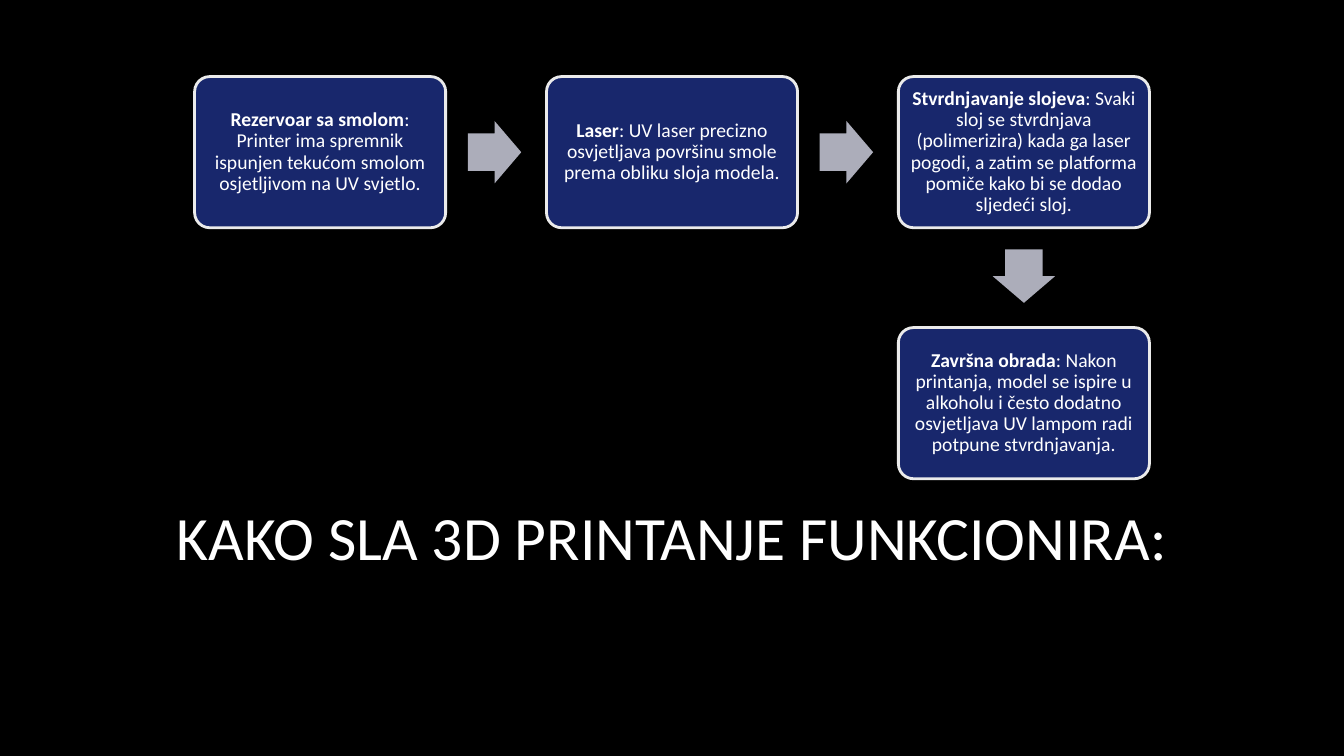
from dataclasses import dataclass

from pptx import Presentation
from pptx.dml.color import RGBColor
from pptx.enum.shapes import MSO_SHAPE
from pptx.enum.text import MSO_ANCHOR, PP_ALIGN
from pptx.shapes.autoshape import Shape
from pptx.slide import Slide
from pptx.text.text import Font
from pptx.util import Inches, Pt


@dataclass(frozen=True)
class Theme:
    """Colours, font and type sizes."""
    back: RGBColor = RGBColor(0, 0, 0)
    text: RGBColor = RGBColor(255, 255, 255)
    card: RGBColor = RGBColor.from_string("18276C")
    edge: RGBColor = RGBColor.from_string("EBEBEB")
    arrow: RGBColor = RGBColor.from_string("ACADBA")
    font: str = "Calibri"
    title: int = 44
    body: int = 14


@dataclass(frozen=True)
class Grid:
    """Card grid in inches: origin, card size, pitch and arrow size."""
    left: float = 1.93
    top: float = 0.76
    wide: float = 2.49
    high: float = 1.5
    col: float = 3.49
    row: float = 2.49
    long: float = 0.53
    span: float = 0.62
    shift: float = 0.015

    def mid(self, col: float, row: float) -> tuple[float, float]:
        """Return the centre of a grid cell."""
        return (self.left + self.wide / 2 + col * self.col,
                self.top + self.high / 2 + row * self.row)


@dataclass(frozen=True)
class Step:
    """One card of the flow and its cell."""
    col: int
    row: int
    head: str
    body: str


THEME = Theme()
GRID = Grid()
STEPS = (
    Step(0, 0, "Rezervoar sa smolom",
         ": Printer ima spremnik ispunjen tekućom smolom osjetljivom na UV svjetlo."),
    Step(1, 0, "Laser",
         ": UV laser precizno osvjetljava površinu smole prema obliku sloja modela."),
    Step(2, 0, "Stvrdnjavanje slojeva",
         ": Svaki sloj se stvrdnjava (polimerizira) kada ga laser pogodi, "
         "a zatim se platforma pomiče kako bi se dodao sljedeći sloj."),
    Step(2, 1, "Završna obrada",
         ": Nakon printanja, model se ispire u alkoholu i često dodatno "
         "osvjetljava UV lampom radi potpune stvrdnjavanja."),
)


def style(font: Font, size: int) -> None:
    """Apply the theme to a font."""
    font.name, font.size = THEME.font, Pt(size)
    font.color.rgb = THEME.text


def block(slide: Slide, kind: MSO_SHAPE, mid: tuple[float, float],
          wide: float, high: float, fill: RGBColor) -> Shape:
    """Add a flat shape around a centre."""
    shape = slide.shapes.add_shape(
        kind, Inches(mid[0] - wide / 2), Inches(mid[1] - high / 2),
        Inches(wide), Inches(high))
    shape.shadow.inherit = False
    shape.fill.solid()
    shape.fill.fore_color.rgb = fill
    return shape


def add_card(slide: Slide, step: Step) -> None:
    """Draw a step's card with its text."""
    card = block(slide, MSO_SHAPE.ROUNDED_RECTANGLE, GRID.mid(step.col, step.row),
                 GRID.wide, GRID.high, THEME.card)
    card.adjustments[0] = 0.1
    card.line.color.rgb, card.line.width = THEME.edge, Pt(2)
    frame = card.text_frame
    frame.word_wrap, frame.vertical_anchor = True, MSO_ANCHOR.MIDDLE
    frame.margin_left = frame.margin_right = Inches(0.06)
    frame.margin_top = frame.margin_bottom = Inches(0.06)
    para = frame.paragraphs[0]
    para.alignment, para.line_spacing = PP_ALIGN.CENTER, 0.9
    style(para.font, THEME.body)
    for text, bold in ((step.head, True), (step.body, False)):
        run = para.add_run()
        run.text, run.font.bold = text, bold


def add_arrow(slide: Slide, start: Step, end: Step) -> None:
    """Draw the arrow in the gap between two cards."""
    right, down = end.col - start.col, end.row - start.row
    x, y = GRID.mid(start.col + right / 2, start.row + down / 2)
    mid = (x - right * GRID.shift, y - down * GRID.shift)
    arrow = block(slide, MSO_SHAPE.RIGHT_ARROW, mid, GRID.long, GRID.span, THEME.arrow)
    arrow.adjustments[0], arrow.adjustments[1] = 0.6, 0.5
    arrow.line.fill.background()
    arrow.rotation = 90 * down


def add_title(slide: Slide, text: str) -> None:
    """Place and format the title."""
    title = slide.shapes.title
    title.left, title.top = Inches(1.13), Inches(5)
    title.width, title.height = Inches(11.08), Inches(1.33)
    frame = title.text_frame
    frame.text = text
    frame.word_wrap, frame.vertical_anchor = True, MSO_ANCHOR.TOP
    frame.margin_top = Inches(0.03)
    para = frame.paragraphs[0]
    para.alignment, para.line_spacing = PP_ALIGN.CENTER, 0.9
    style(para.font, THEME.title)


def main() -> None:
    """Build and save the slide."""
    deck = Presentation()
    deck.slide_width, deck.slide_height = Inches(13.33), Inches(7.5)
    slide = deck.slides.add_slide(deck.slide_layouts[5])
    slide.background.fill.solid()
    slide.background.fill.fore_color.rgb = THEME.back
    add_title(slide, "KAKO SLA 3D PRINTANJE FUNKCIONIRA:")
    for step in STEPS:
        add_card(slide, step)
    for start, end in zip(STEPS, STEPS[1:]):
        add_arrow(slide, start, end)
    deck.save("out.pptx")


if __name__ == "__main__":
    main()
